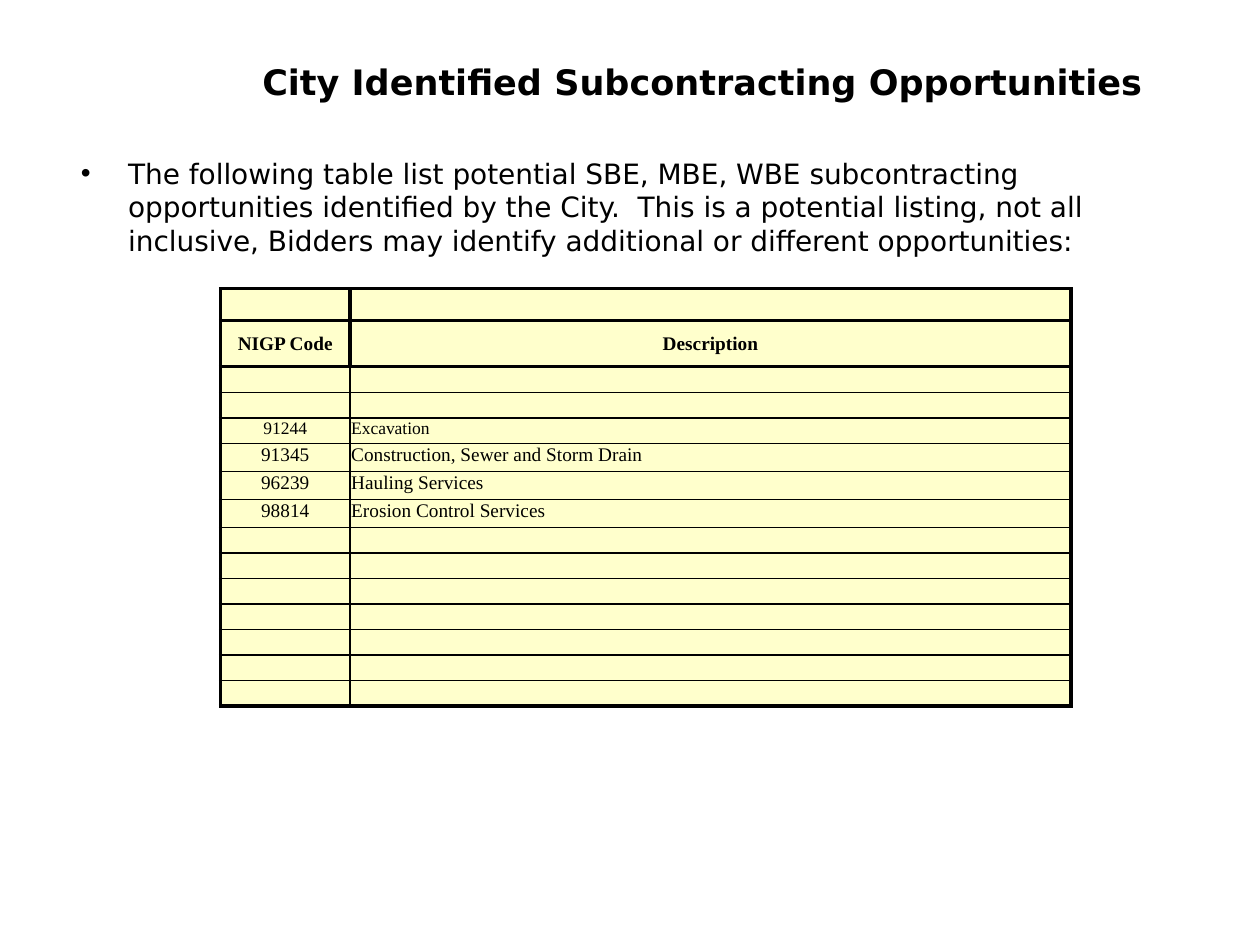
from dataclasses import dataclass

from lxml import etree
from pptx import Presentation
from pptx.dml.color import RGBColor
from pptx.enum.text import MSO_ANCHOR, MSO_AUTO_SIZE, PP_ALIGN
from pptx.oxml.ns import qn
from pptx.util import Pt

LEFT, CENTER = PP_ALIGN.LEFT, PP_ALIGN.CENTER
TOP, MIDDLE = MSO_ANCHOR.TOP, MSO_ANCHOR.MIDDLE
FIXED = MSO_AUTO_SIZE.NONE

BLACK = RGBColor(0x00, 0x00, 0x00)
CREAM = RGBColor(0xFF, 0xFF, 0xCC)
SANS, SERIF = "DejaVu Sans", "Times New Roman"
THICK, THIN = 2.25, 1
HEADER_ROWS = 2
EMPTY_SIZE = 8


@dataclass
class Row:
    code: str = ""
    description: str = ""
    height: float = 14.6
    size: float = 11
    header: bool = False


ROWS = [
    Row(height=18, header=True),
    Row("NIGP Code", "Description", height=26.6, header=True),
    Row(),
    Row(),
    Row("91244", "Excavation", size=10),
    Row("91345", "Construction, Sewer and Storm Drain", height=16),
    Row("96239", "Hauling Services", height=16),
    Row("98814", "Erosion Control Services", height=16),
    *[Row() for _ in range(7)],
]
COLUMN_WIDTHS = [74, 412]


def write(frame, text: str, *, size: float, font: str, bold: bool = False,
          align=LEFT, after: float = 0):
    """Write one formatted paragraph into a text frame."""
    para = frame.paragraphs[0]
    para.alignment = align
    para.space_before, para.space_after = Pt(0), Pt(after)
    span = para.add_run()
    span.text = text
    span.font.size, span.font.name, span.font.bold = Pt(size), font, bold
    span.font.color.rgb = BLACK
    return para


def place(shape, left: float, top: float, width: float, height: float) -> None:
    shape.left, shape.top = Pt(left), Pt(top)
    shape.width, shape.height = Pt(width), Pt(height)
    shape.text_frame.auto_size = FIXED
    shape.text_frame.word_wrap = True


def add_border(cell, side: str, width: float) -> None:
    properties = cell._tc.get_or_add_tcPr()
    line = etree.SubElement(properties, qn(f"a:ln{side}"), w=str(int(Pt(width))))
    fill = etree.SubElement(line, qn("a:solidFill"))
    etree.SubElement(fill, qn("a:srgbClr"), val=str(BLACK))


def format_cell(cell, row_index: int, column_index: int) -> None:
    """Thick lines round the table and the header cells, thin ones elsewhere."""
    header = row_index < HEADER_ROWS
    thick_sides = {
        "L": header or column_index == 0,
        "R": header or column_index == len(COLUMN_WIDTHS) - 1,
        "T": row_index <= HEADER_ROWS,
        "B": header or row_index == len(ROWS) - 1,
    }
    for side, thick in thick_sides.items():
        add_border(cell, side, THICK if thick else THIN)
    cell.fill.solid()
    cell.fill.fore_color.rgb = CREAM
    margin = Pt(0 if header else 0.72)
    cell.margin_left = cell.margin_right = cell.margin_top = margin
    cell.margin_bottom = Pt(0)
    cell.vertical_anchor = MIDDLE if header else TOP


def add_code_table(page, left: float, top: float) -> None:
    frame = page.shapes.add_table(
        len(ROWS), len(COLUMN_WIDTHS), Pt(left), Pt(top),
        Pt(sum(COLUMN_WIDTHS)), Pt(sum(row.height for row in ROWS)))
    table = frame.table
    table.first_row = table.horz_banding = False
    for column, width in zip(table.columns, COLUMN_WIDTHS):
        column.width = Pt(width)
    for row_index, row in enumerate(ROWS):
        table.rows[row_index].height = Pt(row.height)
        for column_index, text in enumerate((row.code, row.description)):
            cell = table.cell(row_index, column_index)
            format_cell(cell, row_index, column_index)
            if text:
                centered = row.header or column_index == 0
                write(cell.text_frame, text, size=row.size, font=SERIF,
                      bold=row.header, align=CENTER if centered else LEFT)
            else:
                # A small end mark keeps an empty row at its set height
                etree.SubElement(cell.text_frame.paragraphs[0]._p,
                                 qn("a:endParaRPr"), sz=str(EMPTY_SIZE * 100))


def main() -> None:
    deck = Presentation()
    deck.slide_width, deck.slide_height = Pt(720), Pt(540)
    page = deck.slides.add_slide(deck.slide_layouts[1])

    # Title
    title = page.shapes.title
    place(title, 126, 21.6, 558, 50.4)
    title.text_frame.vertical_anchor = MIDDLE
    write(title.text_frame, "City Identified Subcontracting Opportunities ",
          size=20, font=SANS, bold=True, align=CENTER)

    # Introduction, with the bullet of the template
    body = page.placeholders[1]
    place(body, 39, 85.7, 642, 65.5)
    intro = write(
        body.text_frame,
        "The following table list potential SBE, MBE, WBE subcontracting "
        "opportunities identified by the City.  This is a potential listing, "
        "not all inclusive, Bidders may identify additional or different "
        "opportunities:",
        size=16, font=SANS, after=6)
    indent = int(Pt(27))
    properties = intro._p.get_or_add_pPr()
    properties.set("marL", str(indent))
    properties.set("indent", str(-indent))

    # Table of subcontracting codes
    add_code_table(page, 126, 165)

    deck.save("out.pptx")


if __name__ == "__main__":
    main()
